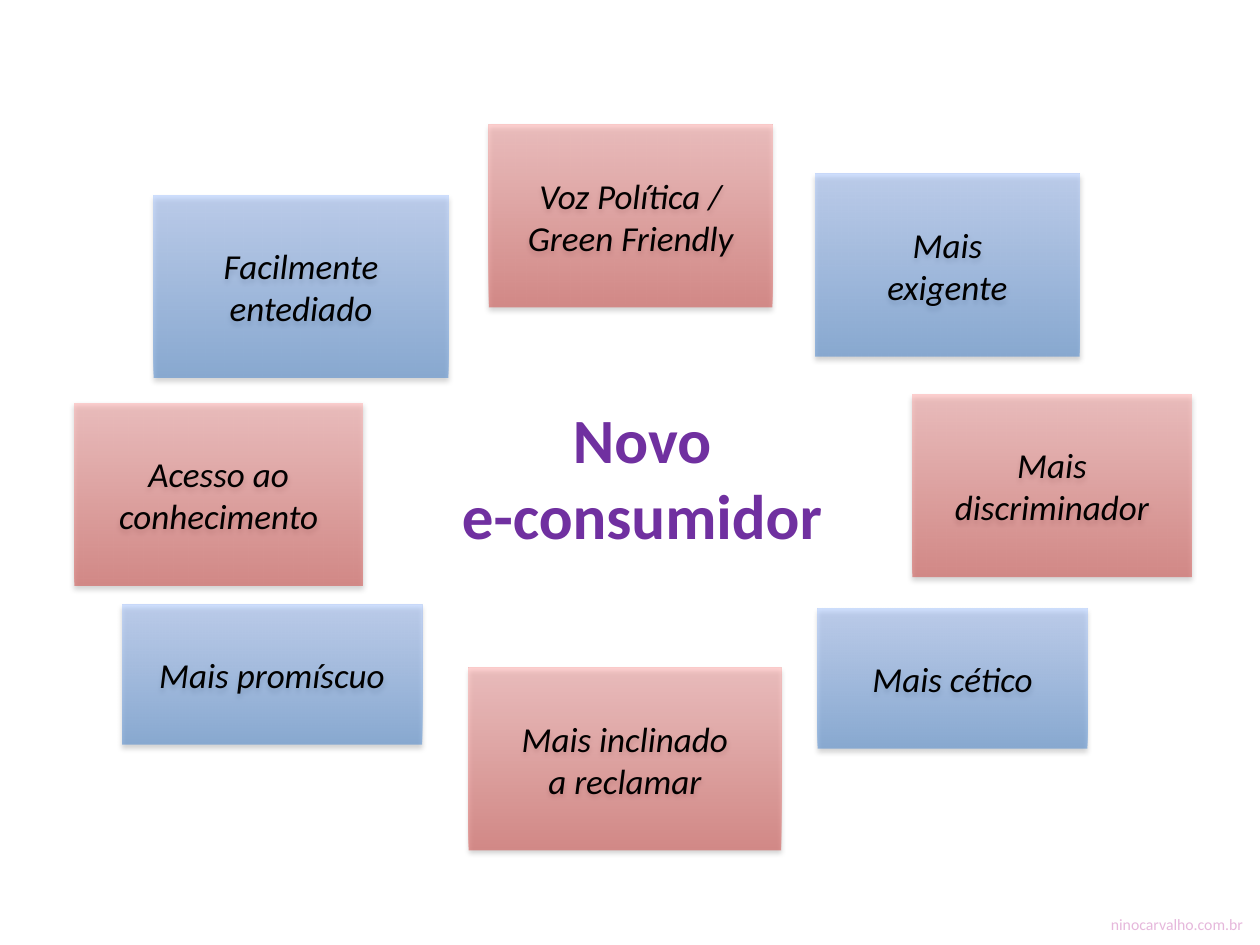
"""Build a slide of eight traits around the new e-consumer."""
from dataclasses import dataclass

from lxml.etree import SubElement
from pptx import Presentation
from pptx.dml.color import RGBColor as RGB
from pptx.enum.shapes import MSO_SHAPE as Kind
from pptx.enum.text import MSO_ANCHOR as Anchor, PP_ALIGN as Align
from pptx.oxml.ns import qn
from pptx.shapes.autoshape import Shape
from pptx.slide import Slide
from pptx.text.text import TextFrame
from pptx.util import Pt

FONT = "Calibri"
BLACK = RGB(0x00, 0x00, 0x00)
INK = RGB(0x02, 0x00, 0x00)
PURPLE = RGB(0x70, 0x30, 0xA0)
PINK = RGB(0xE6, 0xB8, 0xDC)
TALL, LOW = 104.4, 80


@dataclass(frozen=True)
class Tone:
    dark: RGB
    light: RGB
    ink: RGB


@dataclass(frozen=True)
class Trait:
    text: str
    left: float
    top: float
    width: float
    height: float
    tone: Tone


RED = Tone(RGB(0xD1, 0x40, 0x3C), RGB(0xFF, 0xA6, 0xA5), INK)
BLUE = Tone(RGB(0x3F, 0x80, 0xCE), RGB(0xA4, 0xC4, 0xFF), BLACK)

TRAITS = [
    Trait("Voz Política / Green Friendly", 279.4, 71.3, 162, TALL, RED),
    Trait("Mais\ndiscriminador", 521.3, 225.4, 159.8, TALL, RED),
    Trait("Mais inclinado\va reclamar", 267.8, 381.6, 178.6, TALL, RED),
    Trait("Mais\vexigente", 465.8, 99.4, 151.2, TALL, BLUE),
    Trait("Mais cético", 467.3, 347.8, 154.1, LOW, BLUE),
    Trait("Acesso ao conhecimento", 42.5, 230.4, 164.9, TALL, RED),
    Trait("Facilmente\nentediado", 87.8, 111.6, 168.5, TALL, BLUE),
    Trait("Mais promíscuo", 69.8, 345.6, 171.4, LOW, BLUE),
]


def write(frame: TextFrame, text: str, *, size: float, color: RGB,
          align: Align = Align.CENTER, anchor: Anchor = Anchor.MIDDLE,
          bold: bool = False, italic: bool = False) -> None:
    frame.word_wrap = True
    frame.vertical_anchor = anchor
    frame.text = text
    for para in frame.paragraphs:
        para.alignment = align
        for run in para.runs:
            font = run.font
            font.name, font.size = FONT, Pt(size)
            font.bold, font.italic = bold, italic
            font.color.rgb = color


def fade(shape: Shape, tone: Tone) -> None:
    shape.fill.gradient()
    shape.fill.gradient_angle = 90
    for stop, color in zip(shape.fill.gradient_stops, (tone.dark, tone.light)):
        stop.color.rgb = color
    for node in shape._element.spPr.iter(qn("a:srgbClr")):
        SubElement(node, qn("a:alpha"), val="50000")


def shade(shape: Shape) -> None:
    shape.shadow.inherit = False
    effects = shape._element.spPr.find(qn("a:effectLst"))
    outer = SubElement(effects, qn("a:outerShdw"), blurRad=str(Pt(3.1)),
                       dist=str(Pt(1.8)), dir="5400000", rotWithShape="0")
    color = SubElement(outer, qn("a:srgbClr"), val="000000")
    SubElement(color, qn("a:alpha"), val="35000")


def draw(slide: Slide, trait: Trait) -> None:
    shape = slide.shapes.add_shape(
        Kind.RECTANGLE, Pt(trait.left), Pt(trait.top),
        Pt(trait.width), Pt(trait.height))
    fade(shape, trait.tone)
    shape.line.fill.background()
    shade(shape)
    write(shape.text_frame, trait.text, size=20, color=trait.tone.ink,
          italic=True)


def main() -> None:
    deck = Presentation()
    deck.slide_width, deck.slide_height = Pt(720), Pt(540)
    slide = deck.slides.add_slide(deck.slide_layouts[6])
    foot = slide.shapes.add_textbox(Pt(17.3), Pt(519), Pt(700), Pt(12.2))
    write(foot.text_frame, "ninocarvalho.com.br", size=9, color=PINK,
          align=Align.RIGHT, anchor=Anchor.TOP)
    for trait in TRAITS:
        draw(slide, trait)
    title = slide.shapes.add_textbox(Pt(254.2), Pt(225.4), Pt(225.4), Pt(94.3))
    write(title.text_frame, "Novo\ne-consumidor", size=36, color=PURPLE,
          anchor=Anchor.TOP, bold=True)
    deck.save("out.pptx")


if __name__ == "__main__":
    main()
